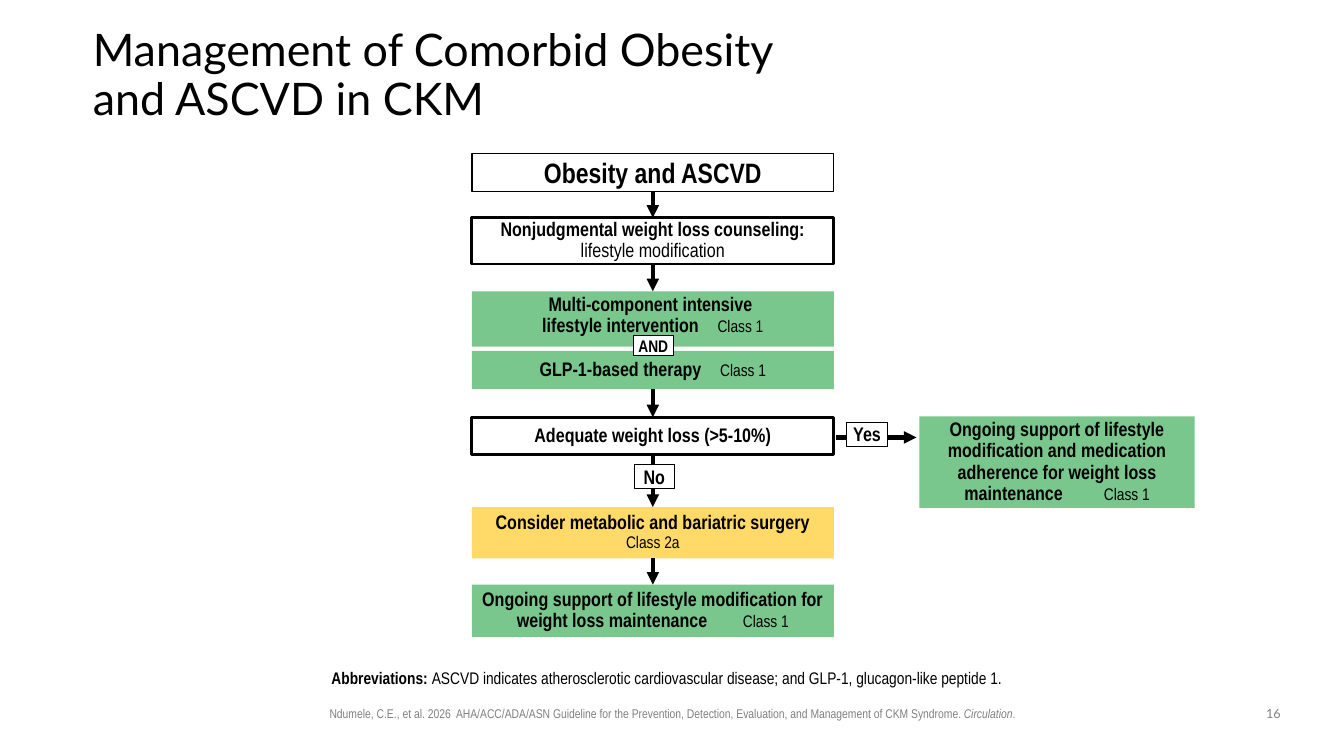
from lxml import etree
from pptx import Presentation
from pptx.dml.color import RGBColor
from pptx.enum.shapes import MSO_CONNECTOR, MSO_SHAPE
from pptx.enum.text import MSO_ANCHOR, PP_ALIGN
from pptx.oxml.ns import qn
from pptx.util import Pt

PX = 9144  # EMU in one px, at 100 px to the inch
RECTANGLE = MSO_SHAPE.RECTANGLE
STRAIGHT = MSO_CONNECTOR.STRAIGHT
TOP, MIDDLE, BOTTOM = MSO_ANCHOR.TOP, MSO_ANCHOR.MIDDLE, MSO_ANCHOR.BOTTOM
LEFT, CENTER = PP_ALIGN.LEFT, PP_ALIGN.CENTER
SIDE_TOP, SIDE_BOTTOM = 0, 2

BLACK = RGBColor(0x00, 0x00, 0x00)
WHITE = RGBColor(0xFF, 0xFF, 0xFF)
GRAY = RGBColor(0x80, 0x80, 0x80)
GREEN = RGBColor(0x79, 0xC7, 0x8D)
YELLOW = RGBColor(0xFF, 0xDA, 0x68)

NARROW, LATO = "Arial Narrow", "Lato"
BOLD = {"size": Pt(14), "bold": True}
PLAIN = {"size": Pt(14), "bold": False}
CLASS = {"size": Pt(12), "bold": False}
NOTE = {"size": Pt(9), "color": GRAY}
INSETS = (10, 5, 10, 5)
NO_INSETS = (0, 0, 0, 0)


def write(box, spans, insets=INSETS, anchor=MIDDLE, align=CENTER, spacing=0.9, font=NARROW):
    """Fill a box with one paragraph; a line feed in a span starts a new line."""
    frame = box.text_frame
    frame.word_wrap = True
    frame.vertical_anchor = anchor
    for side, inset in zip(("left", "top", "right", "bottom"), insets):
        setattr(frame, f"margin_{side}", inset * PX)
    para = frame.paragraphs[0]
    para.alignment = align
    para.line_spacing = spacing
    for text, look in spans:
        for number, line in enumerate(text.split("\n")):
            if number:
                para.add_line_break()
            span = para.add_run()
            span.text = line
            span.font.name = font
            span.font.color.rgb = look.get("color", BLACK)
            for key in ("size", "bold", "italic"):
                if key in look:
                    setattr(span.font, key, look[key])
            if "gap" in look:  # letter spacing widens a single space
                span.font._element.set("spc", str(look["gap"] * 100))


def add_arrow(x1, y1, x2, y2):
    arrow = page.shapes.add_connector(STRAIGHT, x1 * PX, y1 * PX, x2 * PX, y2 * PX)
    arrow.line.color.rgb = BLACK
    arrow.line.width = Pt(3)
    etree.SubElement(arrow.line._get_or_add_ln(), qn("a:tailEnd"), type="triangle")
    etree.SubElement(arrow._element.spPr, qn("a:effectLst"))
    return arrow


deck = Presentation()
deck.slide_width, deck.slide_height = 1333 * PX, 750 * PX
page = deck.slides.add_slide(deck.slide_layouts[6])

# Title, abbreviations, citation and page number
texts = [
    ((92, 40, 1062, 72),
     [("Management of Comorbid Obesity \nand ASCVD in CKM", {"size": Pt(32)})],
     {"insets": NO_INSETS, "align": LEFT, "font": LATO}),
    ((188, 642, 957, 46),
     [("Abbreviations: ", {"size": Pt(12), "bold": True}),
      ("ASCVD indicates atherosclerotic cardiovascular disease; "
       "and GLP-1, glucagon-like peptide 1.", CLASS)],
     {"insets": (0, 5, 10, 5), "anchor": BOTTOM}),
    ((236, 695, 862, 25),
     [("Ndumele, C.E., et al. 2026  AHA/ACC/ADA/ASN Guideline for the Prevention, Detection, "
       "Evaluation, and Management of CKM Syndrome. ", NOTE),
      ("Circulation", {**NOTE, "italic": True}), (".", NOTE)],
     {"anchor": TOP, "spacing": 1.0}),
    ((1242, 695, 42, 26), [("16", NOTE)], {"anchor": TOP, "spacing": 1.0, "font": LATO}),
]
for place, spans, layout in texts:
    write(page.shapes.add_textbox(*(length * PX for length in place)), spans, **layout)

# Flowchart boxes: name, left, top, width, height, fill, line width, spans, layout
COLUMN, WIDTH = 468, 359
steps = [
    ("start", COLUMN, 152, WIDTH, 38, WHITE, 1,
     [("Obesity and ASCVD", {"size": Pt(20), "bold": True})], {"spacing": 1.0}),
    ("counseling", COLUMN, 216, WIDTH, 46, WHITE, 2,
     [("Nonjudgmental weight loss counseling: ", BOLD), ("lifestyle modification", PLAIN)],
     {"insets": NO_INSETS}),
    ("intervention", COLUMN, 289, WIDTH, 55, GREEN, 0,
     [("Multi-component intensive \nlifestyle intervention", BOLD),
      (" ", {**BOLD, "gap": 10}), ("Class 1", CLASS)],
     {"insets": (10, 3, 10, 10)}),
    ("therapy", COLUMN, 348, WIDTH, 38, GREEN, 0,
     [("GLP-1-based therapy", BOLD), (" ", {**BOLD, "gap": 10}), ("Class 1", CLASS)], {}),
    ("decision", COLUMN, 414, WIDTH, 37, WHITE, 2,
     [("Adequate weight loss (>5-10%)", BOLD)], {"insets": NO_INSETS}),
    ("adherence", 912, 413, 273, 91, GREEN, 0,
     [("Ongoing support of lifestyle modification and medication adherence "
       "for weight loss maintenance", BOLD),
      (" ", {**BOLD, "gap": 26}), ("Class 1", CLASS)], {}),
    ("surgery", COLUMN, 503, WIDTH, 51, YELLOW, 0,
     [("Consider metabolic and bariatric surgery", BOLD),
      (" ", {**BOLD, "gap": 16}), ("Class 2a", CLASS)], {}),
    ("maintenance", COLUMN, 580, WIDTH, 52, GREEN, 0,
     [("Ongoing support of lifestyle modification for weight loss maintenance", BOLD),
      (" ", {**BOLD, "gap": 22}), ("Class 1", CLASS)], {}),
]
# Small labels lie on top of the boxes and arrows
label_layout = {"insets": NO_INSETS, "anchor": TOP, "spacing": 1.0}
labels = [
    (text, left, top, 40, height, WHITE, 0.75,
     [(text, {"size": Pt(size), "bold": True})], label_layout)
    for text, left, top, height, size in (
        ("AND", 628, 333, 20, 12), ("No", 629, 461, 24, 14), ("Yes", 840, 419, 24, 14))
]

boxes = {}
for group in (steps, labels):
    if group is labels:
        # Arrows between the boxes, and the branch to the right
        for upper, lower in (("start", "counseling"), ("counseling", "intervention"),
                             ("therapy", "decision"), ("decision", "surgery"),
                             ("surgery", "maintenance")):
            arrow = add_arrow(0, 0, 0, 0)
            arrow.begin_connect(boxes[upper], SIDE_BOTTOM)
            arrow.end_connect(boxes[lower], SIDE_TOP)
        add_arrow(829, 434, 909, 434)
    for name, left, top, width, height, fill, line, spans, layout in group:
        box = page.shapes.add_shape(RECTANGLE, left * PX, top * PX, width * PX, height * PX)
        box.shadow.inherit = False
        box.fill.solid()
        box.fill.fore_color.rgb = fill
        if line:
            box.line.color.rgb = BLACK
            box.line.width = Pt(line)
        else:
            box.line.fill.background()
        write(box, spans, **layout)
        boxes[name] = box

deck.save("out.pptx")
